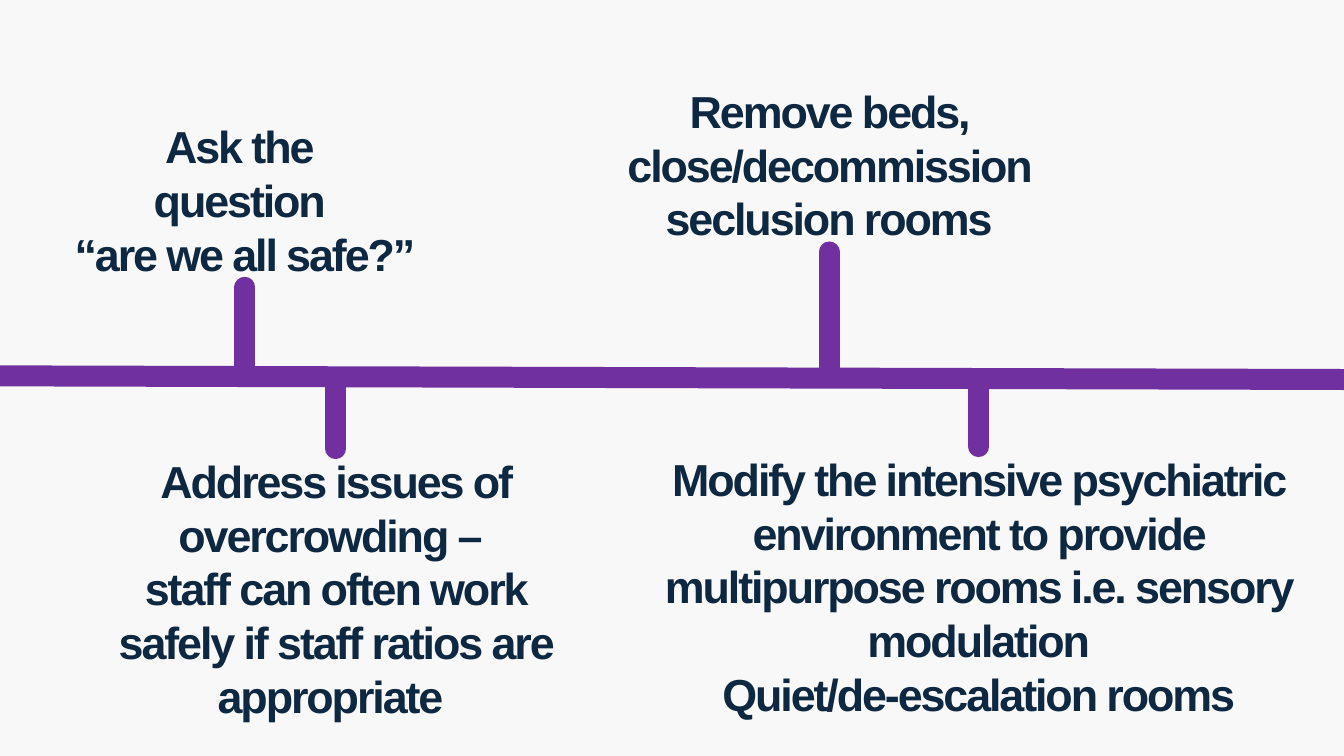
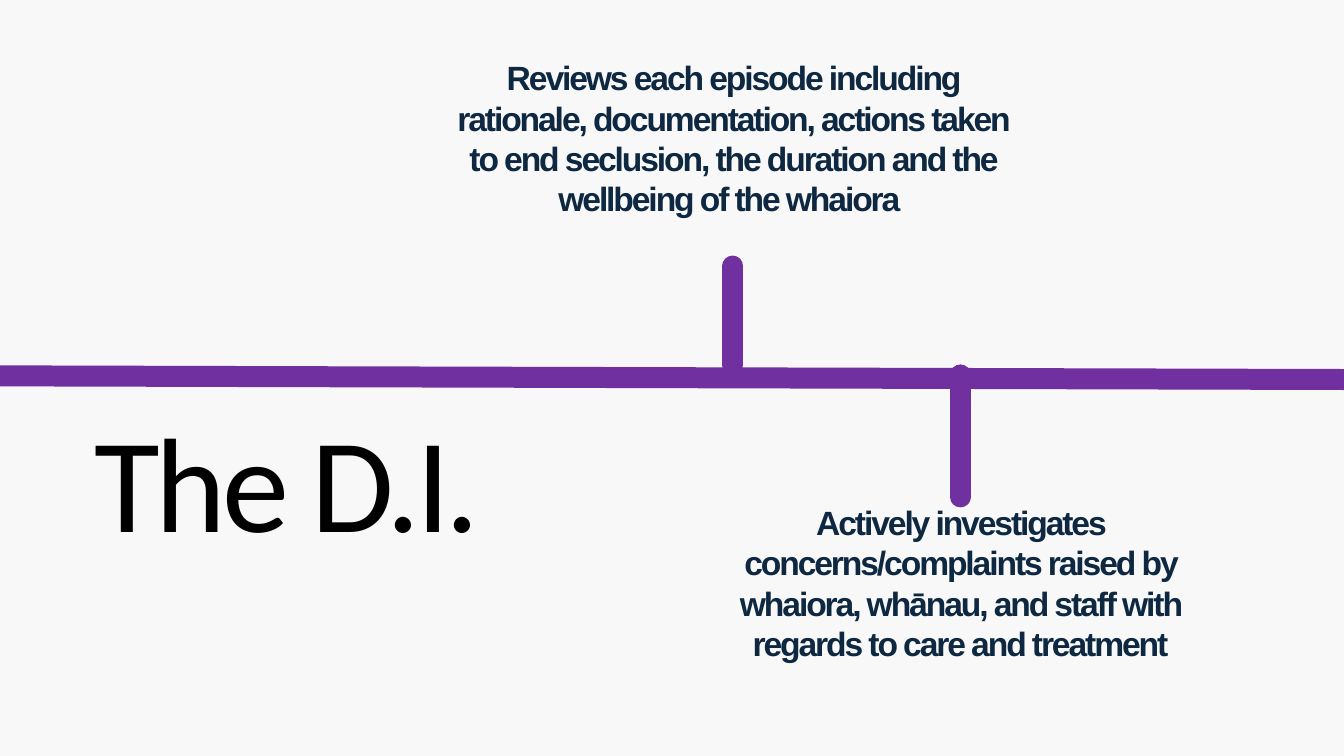
from lxml.etree import SubElement
from pptx import Presentation
from pptx.dml.color import RGBColor
from pptx.enum.shapes import MSO_CONNECTOR
from pptx.enum.text import MSO_AUTO_SIZE, PP_ALIGN
from pptx.oxml.ns import qn
from pptx.util import Inches, Pt

SLIDE_WIDTH, SLIDE_HEIGHT = Inches(13.33), Inches(7.5)
BACKGROUND, PURPLE, NAVY, BLACK = "F8F8F8", "7030A0", "0E2841", "000000"
LINE_WEIGHT = 15
AXIS_LEFT_ROW, AXIS_RIGHT_ROW = 49.72, 50.2


def color(hex_string):
    return RGBColor.from_string(hex_string)


def col(share):
    return round(SLIDE_WIDTH * share / 100)


def row(share):
    return round(SLIDE_HEIGHT * share / 100)


def add_line(slide, start, end, cap="flat"):
    line = slide.shapes.add_connector(
        MSO_CONNECTOR.STRAIGHT, col(start[0]), row(start[1]), col(end[0]), row(end[1])
    )
    line.line.color.rgb = color(PURPLE)
    line.line.width = Pt(LINE_WEIGHT)
    line.line._get_or_add_ln().set("cap", cap)
    SubElement(line._element.spPr, qn("a:effectLst"))


def add_text(slide, box, paragraphs, size, font_name, ink, tracking,
             bold=False, align=PP_ALIGN.LEFT, leading=None):
    left, top, width, height = box
    frame = slide.shapes.add_textbox(col(left), row(top), col(width), row(height)).text_frame
    frame.word_wrap = True
    frame.auto_size = MSO_AUTO_SIZE.SHAPE_TO_FIT_TEXT
    for index, words in enumerate(paragraphs):
        paragraph = frame.add_paragraph() if index else frame.paragraphs[0]
        paragraph.alignment = align
        if leading:
            paragraph.line_spacing = Pt(leading)
        run = paragraph.add_run()
        run.text = words
        run._r.get_or_add_rPr().set("spc", str(round(tracking * 100)))
        font = paragraph.font
        font.name, font.size, font.bold = font_name, Pt(size), bold
        font.color.rgb = color(ink)


def add_event(slide, box, paragraphs, size, stem_end):
    left, top, width, height = box
    add_text(slide, box, paragraphs, size, "Arial", NAVY, -1.5,
             bold=True, align=PP_ALIGN.CENTER, leading=size * 1.2)
    center = left + width / 2
    text_edge = top + height if top < stem_end else top
    add_line(slide, (center, text_edge), (center, stem_end), cap="rnd")


def add_timeline(presentation, events, size):
    slide = presentation.slides.add_slide(presentation.slide_layouts[6])
    add_line(slide, (0, AXIS_LEFT_ROW), (100, AXIS_RIGHT_ROW))
    for box, paragraphs, stem_end in events:
        add_event(slide, box, paragraphs, size, stem_end)
    return slide


SAFETY_EVENTS = [
    ((3, 15.07, 30.46, 22.93),
     ["Ask the ", "question ", "“are we all safe?”"], 48.53),
    ((5.48, 59.33, 39, 37.2),
     ["Address issues of overcrowding – ",
      "staff can often work safely if staff ratios are appropriate "], 51.2),
    ((44.48, 10.4, 34.43, 22.93),
     ["Remove beds, close/decommission seclusion rooms"], 49.33),
    ((47.33, 59.07, 51, 37.2),
     ["Modify the intensive psychiatric environment to provide "
      "multipurpose rooms i.e. sensory modulation",
      "Quiet/de-escalation rooms"], 50.13),
]

INSPECTOR_EVENTS = [
    ((32.18, 6.93, 44.7, 28.27),
     ["Reviews each episode including rationale, documentation, actions taken "
      "to end seclusion, the duration and the wellbeing of the whaiora "], 48.27),
    ((52.74, 65.73, 37.43, 28.27),
     ["Actively investigates concerns/complaints raised by whaiora, whānau, "
      "and staff with regards to care and treatment"], 49.6),
]


def main():
    presentation = Presentation()
    presentation.slide_width, presentation.slide_height = SLIDE_WIDTH, SLIDE_HEIGHT
    backdrop = presentation.slide_master.background.fill
    backdrop.solid()
    backdrop.fore_color.rgb = color(BACKGROUND)
    add_timeline(presentation, SAFETY_EVENTS, 32)
    inspector = add_timeline(presentation, INSPECTOR_EVENTS, 24)
    add_text(inspector, (6.3, 52, 51.84, 22.93), ["The D.I."], 96, "Calibri", BLACK, -3)
    presentation.save("out.pptx")


if __name__ == "__main__":
    main()
